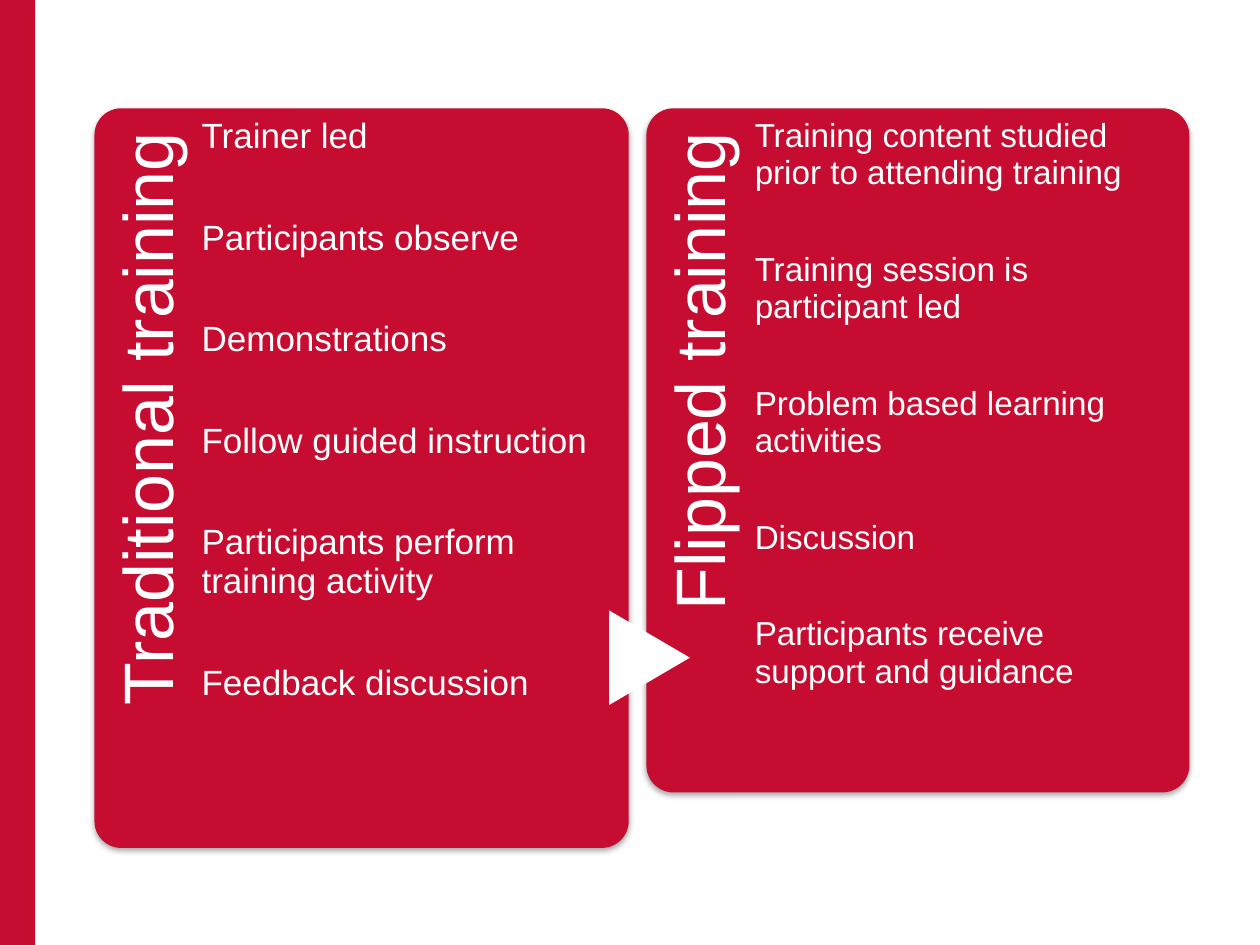
import pptx
import pptx.dml.color
import pptx.enum.shapes
import pptx.enum.text
import pptx.oxml
import pptx.oxml.ns
import pptx.util

PX = 9144
RED = pptx.dml.color.RGBColor(0xC6, 0x0C, 0x30)
WHITE = pptx.dml.color.RGBColor(0xFF, 0xFF, 0xFF)
SHAPES = pptx.enum.shapes.MSO_SHAPE
ALIGN = pptx.enum.text.PP_ALIGN

TRADITIONAL = [
    "Trainer led",
    "Participants observe",
    "Demonstrations",
    "Follow guided instruction",
    "Participants perform training activity",
    "Feedback discussion",
]
FLIPPED = [
    "Training content studied prior to attending training",
    "Training session is participant led",
    "Problem based learning activities",
    "Discussion",
    "Participants receive support and guidance",
]


def emu(box):
    return [round(length * PX) for length in box]


def apply_format(target, values):
    for name, value in values.items():
        setattr(target, name, value)


def add_shadow(shape, color, blur):
    namespace = pptx.oxml.ns.nsdecls("a")
    distance = pptx.util.Pt(1.8)
    effects = pptx.oxml.parse_xml(
        f'<a:effectLst {namespace}><a:outerShdw blurRad="{pptx.util.Pt(blur)}" '
        f'dist="{distance}" dir="5400000" rotWithShape="0"><a:srgbClr val="{color}">'
        '<a:alpha val="35000"/></a:srgbClr></a:outerShdw></a:effectLst>'
    )
    properties = shape._element.spPr
    for old in properties.findall(pptx.oxml.ns.qn("a:effectLst")):
        properties.remove(old)
    properties.append(effects)


def add_block(page, kind, box, color):
    shape = page.shapes.add_shape(kind, *emu(box))
    shape.fill.solid()
    shape.fill.fore_color.rgb = color
    shape.line.fill.background()
    shape.shadow.inherit = False
    return shape


def add_text(page, box, lines, size, margins, para_format):
    shape = page.shapes.add_textbox(*emu(box))
    frame = shape.text_frame
    sides = ("margin_left", "margin_top", "margin_right", "margin_bottom")
    apply_format(frame, dict(zip(sides, emu(margins)), word_wrap=True))
    for index, line in enumerate(lines):
        para = frame.add_paragraph() if index else frame.paragraphs[0]
        apply_format(para, para_format)
        span = para.add_run()
        span.text = line
        apply_format(span.font, {"name": "Arial", "size": pptx.util.Pt(size)})
        span.font.color.rgb = WHITE
    return shape


def add_side_bar(page, box):
    bar = add_block(page, SHAPES.RECTANGLE, box, RED)
    add_shadow(bar, "808080", 0)


def add_panel(page, box, title, lines, size, gap):
    left, top, width, height = box
    panel = add_block(page, SHAPES.ROUNDED_RECTANGLE, box, RED)
    panel.adjustments[0] = 0.05
    add_shadow(panel, "000000", 3.1)

    band = round(width * 0.2)
    length = round(height * 0.82)
    shift = (length - band) / 2
    heading = add_text(
        page, (left - shift, top + shift, length, band), [title], 40,
        (0, 15, 19, 0), {"alignment": ALIGN.RIGHT, "line_spacing": 0.9})
    heading.rotation = 270

    add_text(
        page, (left + band, top, round(width * 0.745), height), lines, size,
        (0, 7, 0, 0),
        {"alignment": ALIGN.LEFT, "line_spacing": 0.94,
         "space_after": pptx.util.Pt(gap)})


def add_pointer(page, box):
    pointer = add_block(page, SHAPES.FLOWCHART_EXTRACT, box, WHITE)
    pointer.rotation = 90


def main():
    deck = pptx.Presentation()
    apply_format(deck, {"slide_width": 1000 * PX, "slide_height": 750 * PX})
    page = deck.slides.add_slide(deck.slide_layouts[6])
    add_side_bar(page, (0, 0, 28, 750))
    add_panel(page, (75, 86, 424, 587), "Traditional training", TRADITIONAL, 20, 35.4)
    add_panel(page, (513, 86, 431, 543), "Flipped training", FLIPPED, 19, 33.7)
    add_pointer(page, (478, 490, 75, 64))
    deck.save("out.pptx")


if __name__ == "__main__":
    main()
